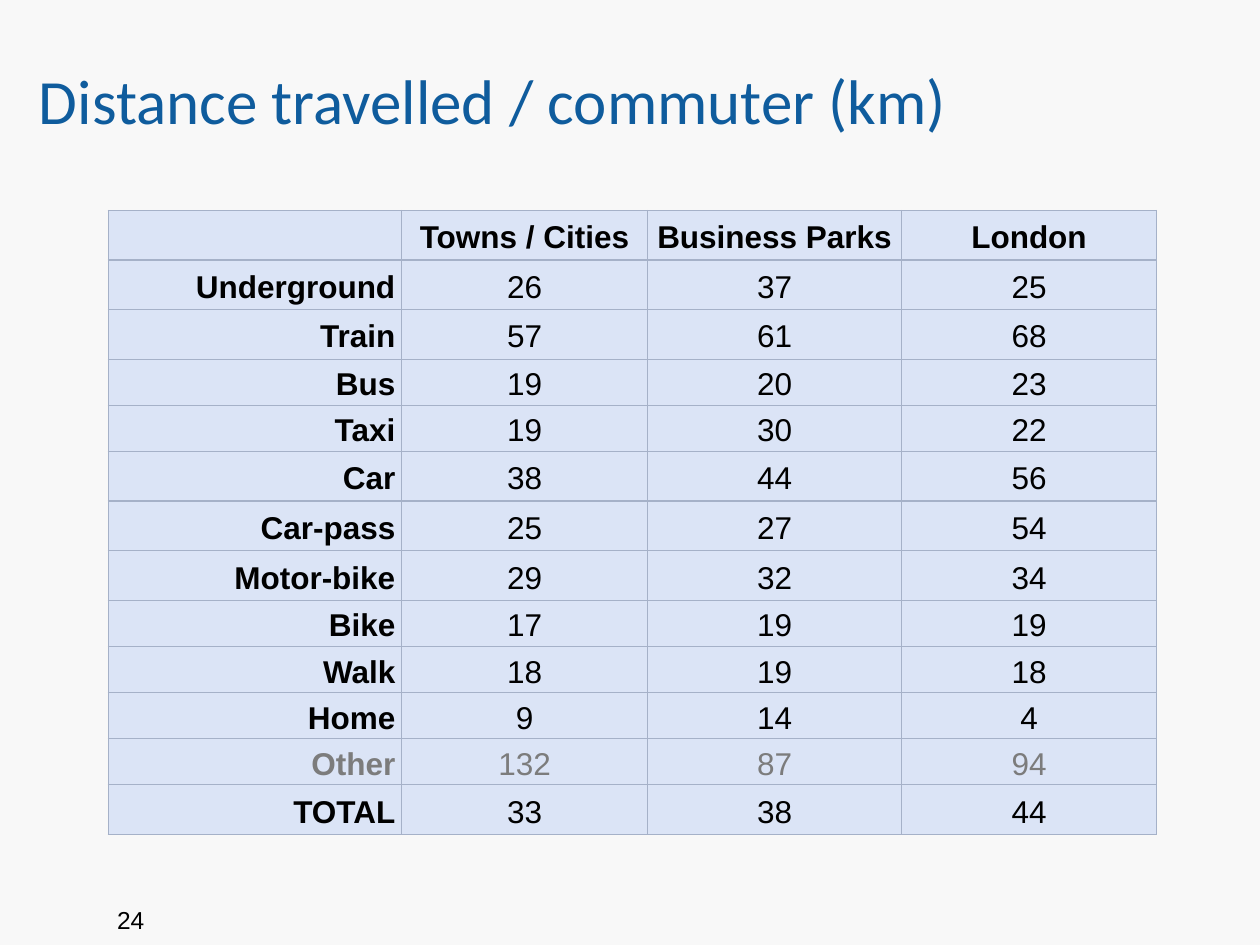
from lxml.etree import SubElement
from pptx import Presentation
from pptx.dml.color import RGBColor
from pptx.enum.text import MSO_ANCHOR as Anchor, PP_ALIGN as Align
from pptx.oxml.ns import qn
from pptx.util import Cm, Pt

BLACK, GREY, BLUE = "000000", "7C7C7C", "0F5C9D"
BACKGROUND, CELL_FILL, BORDER = "F8F8F8", "DBE4F6", "A5B1C8"

COLUMN_WIDTHS = [5.92, 4.95, 5.13, 5.13]
TALL_ROW, SHORT_ROW = 1.0, 0.93
SHORT_MODES = {"Bus", "Taxi", "Bike", "Walk", "Home", "Other"}
DISTANCES = [
    ("", "Towns / Cities", "Business Parks", "London"),
    ("Underground", 26, 37, 25),
    ("Train", 57, 61, 68),
    ("Bus", 19, 20, 23),
    ("Taxi", 19, 30, 22),
    ("Car", 38, 44, 56),
    ("Car-pass", 25, 27, 54),
    ("Motor-bike", 29, 32, 34),
    ("Bike", 17, 19, 19),
    ("Walk", 18, 19, 18),
    ("Home", 9, 14, 4),
    ("Other", 132, 87, 94),
    ("TOTAL", 33, 38, 44),
]


def rgb(value):
    return RGBColor.from_string(value)


def write(frame, text, font, size, color, bold=False, align=Align.LEFT):
    frame.text = text
    para = frame.paragraphs[0]
    para.alignment = align
    para.font.size = Pt(size)
    for span in para.runs:
        span.font.name = font
        span.font.size = Pt(size)
        span.font.bold = bold
        span.font.color.rgb = rgb(color)
    return para


def add_borders(cell):
    """Line all four sides; the lines must precede the fill in the XML."""
    properties = cell._tc.get_or_add_tcPr()
    for side in ("lnL", "lnR", "lnT", "lnB"):
        line = SubElement(properties, qn(f"a:{side}"), w=str(Pt(0.75)))
        fill = SubElement(line, qn("a:solidFill"))
        SubElement(fill, qn("a:srgbClr"), val=BORDER)


def format_cell(cell, text, color, bold, align):
    add_borders(cell)
    cell.fill.solid()
    cell.fill.fore_color.rgb = rgb(CELL_FILL)
    cell.vertical_anchor = Anchor.MIDDLE
    cell.margin_left = cell.margin_right = Cm(0.13)
    cell.margin_top = cell.margin_bottom = 0
    para = write(cell.text_frame, text, "Arial", 18, color, bold, align)
    para.line_spacing = 1.15


def add_title(slide, text):
    title = slide.shapes.title
    title.left, title.top = Cm(0.53), Cm(1.09)
    title.width, title.height = Cm(21), Cm(1.83)
    title.text_frame.vertical_anchor = Anchor.MIDDLE
    write(title.text_frame, text, "Calibri", 36, BLUE)


def add_distance_table(slide):
    frame = slide.shapes.add_table(
        len(DISTANCES), len(COLUMN_WIDTHS), Cm(2.18), Cm(4.24),
        Cm(sum(COLUMN_WIDTHS)), Cm(TALL_ROW * len(DISTANCES)))
    table = frame.table
    table.horz_banding = False
    for column, width in zip(table.columns, COLUMN_WIDTHS):
        column.width = Cm(width)
    for row_index, values in enumerate(DISTANCES):
        row, mode = table.rows[row_index], values[0]
        row.height = Cm(SHORT_ROW if mode in SHORT_MODES else TALL_ROW)
        color = GREY if mode == "Other" else BLACK
        for column_index, value in enumerate(values):
            is_heading = row_index == 0 or column_index == 0
            align = Align.CENTER if column_index else Align.RIGHT
            format_cell(row.cells[column_index], str(value), color,
                        is_heading, align)


def add_page_number(slide, number):
    box = slide.shapes.add_textbox(Cm(2.11), Cm(18.11), Cm(17.6), Cm(1.32))
    box.text_frame.word_wrap = True
    write(box.text_frame, str(number), "Arial", 14, BLACK)


def main():
    deck = Presentation()
    deck.slide_width, deck.slide_height = Cm(25.4), Cm(19.05)
    slide = deck.slides.add_slide(deck.slide_layouts[5])
    slide.background.fill.solid()
    slide.background.fill.fore_color.rgb = rgb(BACKGROUND)
    add_title(slide, "Distance travelled / commuter (km)")
    add_distance_table(slide)
    add_page_number(slide, 24)
    deck.save("out.pptx")


if __name__ == "__main__":
    main()
